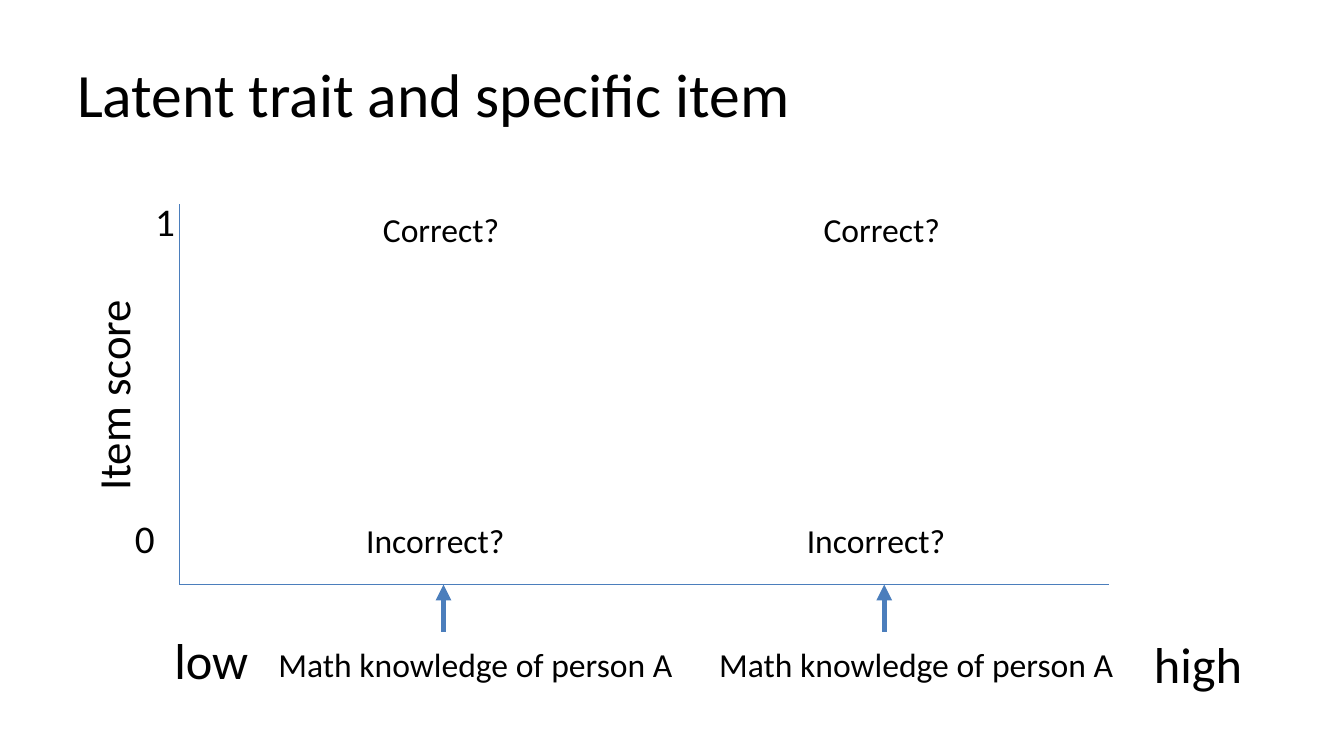
from dataclasses import dataclass

from lxml import etree
from pptx import Presentation
from pptx.dml.color import RGBColor
from pptx.enum import shapes, text
from pptx.oxml import ns
from pptx.util import Pt


@dataclass(frozen=True)
class Theme:
    font: str = "Calibri"
    ink: RGBColor = RGBColor(0, 0, 0)
    accent: RGBColor = RGBColor(0x4B, 0x7E, 0xBC)
    title: int = 44
    trait_end: int = 36
    axis_title: int = 32
    score: int = 28
    label: int = 24
    axis_line: float = 0.75
    arrow_line: float = 3.75


THEME = Theme()
AXIS_X, AXIS_Y = 128.5, 417.6
PERSON_X = 316.8
PERSON_STEP = 314.8


def add_label(page, words, left, top, width, height, size, rotation=0, wrap=False):
    box = page.shapes.add_textbox(Pt(left), Pt(top), Pt(width), Pt(height))
    box.rotation = rotation
    frame = box.text_frame
    frame.word_wrap = wrap
    if wrap:
        frame.vertical_anchor = text.MSO_ANCHOR.MIDDLE
    else:
        frame.auto_size = text.MSO_AUTO_SIZE.SHAPE_TO_FIT_TEXT
    para = frame.paragraphs[0]
    para.text = words
    para.font.name = THEME.font
    para.font.size = Pt(size)
    para.font.color.rgb = THEME.ink


def add_line(page, start, end, width, arrow=False):
    line = page.shapes.add_connector(
        shapes.MSO_CONNECTOR.STRAIGHT, *(Pt(value) for value in (*start, *end)))
    line.line.color.rgb = THEME.accent
    line.line.width = Pt(width)
    properties = line._element.spPr
    if arrow:
        outline = properties.find(ns.qn("a:ln"))
        etree.SubElement(outline, ns.qn("a:tailEnd"), type="triangle")
    etree.SubElement(properties, ns.qn("a:effectLst"))


def add_axes(page):
    add_line(page, (AXIS_X, AXIS_Y), (792, AXIS_Y), THEME.axis_line)
    add_line(page, (AXIS_X, AXIS_Y), (AXIS_X, 145.4), THEME.axis_line)
    add_label(page, "low", 117.4, 445.7, 67.7, 51, THEME.trait_end)
    add_label(page, "high", 817.2, 448.6, 78.5, 51, THEME.trait_end)
    add_label(page, "Item score", 4.3, 258.5, 152.6, 46, THEME.axis_title, rotation=270)
    add_label(page, "0", 89.3, 363.6, 28.8, 41, THEME.score)
    add_label(page, "1", 103.7, 137.5, 28.8, 41, THEME.score)


def add_person(page, x):
    """Mark a trait level on the axis with its two possible item scores."""
    add_line(page, (x, 451.4), (x, AXIS_Y), THEME.arrow_line, arrow=True)
    add_label(page, "Correct?", x - 50.4, 145.4, 98.6, 36, THEME.label)
    add_label(page, "Incorrect?", x - 62.4, 367.9, 114.5, 36, THEME.label)
    add_label(page, "Math knowledge of person A", x - 125, 456.5, 298.8, 36, THEME.label)


def main():
    deck = Presentation()
    deck.slide_width, deck.slide_height = Pt(960), Pt(540)
    page = deck.slides.add_slide(deck.slide_layouts[6])
    add_label(page, "Latent trait and specific item", 48, 21.6, 864, 90,
              THEME.title, wrap=True)
    add_axes(page)
    for person in range(2):
        add_person(page, PERSON_X + person * PERSON_STEP)
    deck.save("out.pptx")


if __name__ == "__main__":
    main()
